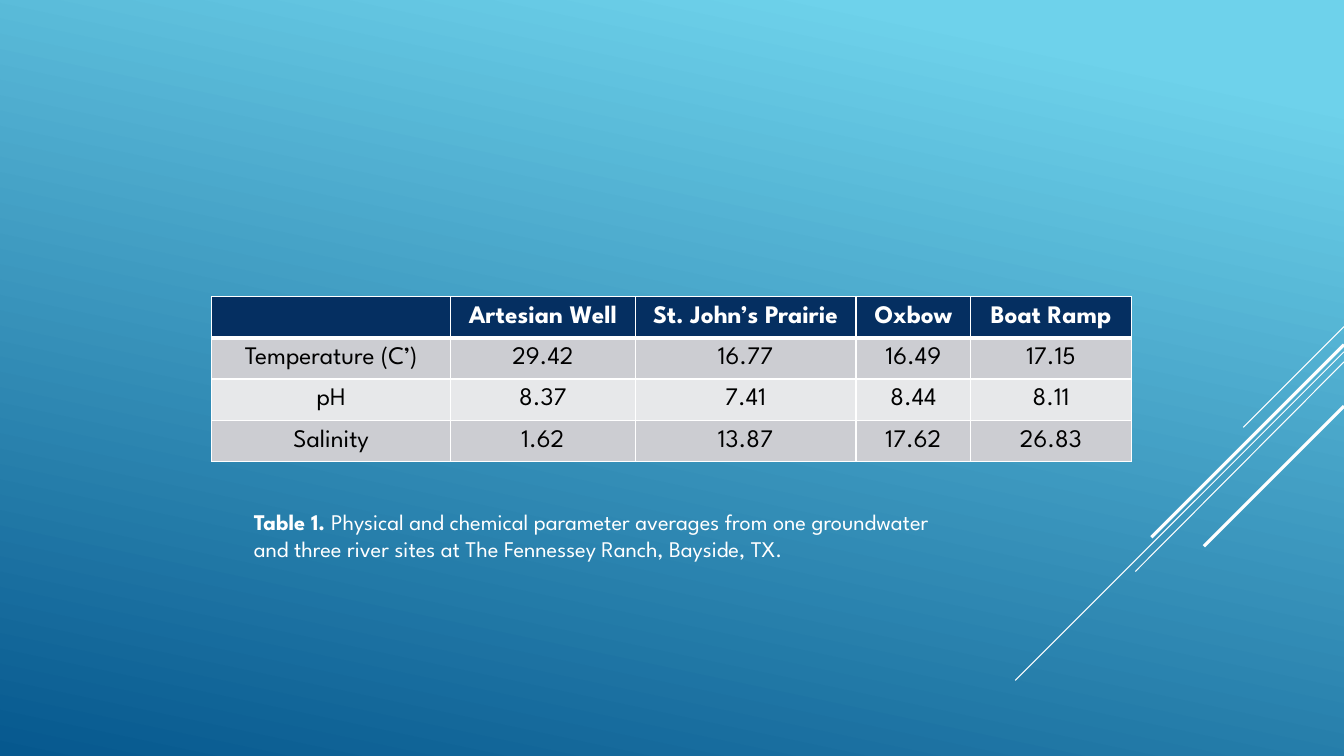
from lxml import etree
from pptx import Presentation
from pptx import util as u
from pptx.dml import color
from pptx.enum import shapes, text
from pptx.oxml import ns

COLORS = {
    "sky": "6ED2EB",
    "deep": "06588E",
    "navy": "052F61",
    "white": "FFFFFF",
    "black": "000000",
    "band": "CCCDD2",
    "pale": "E7E8EA",
}

STREAKS = [
    (3.24, 12.33, 4.24, 0.75),
    (3.49, 10.07, 6.75, 0.75),
    (3.59, 11.26, 5.67, 0.75),
    (3.42, 11.42, 5.33, 2.25),
    (4.03, 11.94, 5.42, 2.25),
]

COLUMN_WIDTHS = [2.37, 1.83, 2.19, 1.14, 1.59]
ROW_HEIGHT = 0.41
ROWS = [
    ["", "Artesian Well", "St. John’s Prairie", "Oxbow", "Boat Ramp"],
    ["Temperature (C’)", "29.42", "16.77", "16.49", "17.15"],
    ["pH", "8.37", "7.41", "8.44", "8.11"],
    ["Salinity", "1.62", "13.87", "17.62", "26.83"],
]

CAPTION = [
    [("Table 1. ", True),
     ("Physical and chemical parameter averages from one groundwater", False)],
    [("and three river sites at The Fennessey Ranch, Bayside, TX.", False)],
]


def rgb(name):
    return color.RGBColor.from_string(COLORS[name])


def apply(target, values):
    for name, value in values.items():
        setattr(target, name, value)


class SlideBuilder:
    font = "League Spartan"

    def __init__(self, deck):
        self.page = deck.slides.add_slide(deck.slide_layouts[6])

    def background(self, first, last, angle):
        fill = self.page.background.fill
        fill.gradient()
        fill.gradient_angle = angle
        for stop, (name, position) in zip(fill.gradient_stops, (first, last)):
            stop.color.rgb = rgb(name)
            stop.position = position

    def line(self, start, end, width):
        points = [u.Inches(value) for value in (*start, *end)]
        line = self.page.shapes.add_connector(shapes.MSO_CONNECTOR.STRAIGHT, *points)
        line.line.color.rgb = rgb("white")
        line.line.width = u.Pt(width)
        etree.SubElement(line._element.spPr, ns.qn("a:effectLst"))

    def span(self, para, words, size, name, bold):
        span = para.add_run()
        span.text = words
        apply(span.font, {"name": self.font, "size": u.Pt(size), "bold": bold})
        span.font.color.rgb = rgb(name)

    def caption(self, place, lines):
        box = self.page.shapes.add_textbox(*[u.Inches(value) for value in place])
        frame = box.text_frame
        apply(frame, {"word_wrap": True, "vertical_anchor": text.MSO_ANCHOR.TOP})
        for index, spans in enumerate(lines):
            para = frame.add_paragraph() if index else frame.paragraphs[0]
            for words, bold in spans:
                self.span(para, words, 16, "white", bold)

    def border(self, cell, side, width):
        properties = cell._tc.get_or_add_tcPr()
        edge = etree.SubElement(properties, ns.qn(f"a:ln{side}"), w=str(u.Pt(width)))
        fill = etree.SubElement(edge, ns.qn("a:solidFill"))
        etree.SubElement(fill, ns.qn("a:srgbClr"), val=COLORS["white"])

    def cell(self, cell, words, row):
        header = row == 0
        widths = {"L": 1, "R": 1, "T": 3 if row == 1 else 1, "B": 3 if header else 1}
        for side, width in widths.items():
            self.border(cell, side, width)
        cell.fill.solid()
        cell.fill.fore_color.rgb = rgb("navy" if header else "band" if row % 2 else "pale")
        cell.vertical_anchor = text.MSO_ANCHOR.MIDDLE
        para = cell.text_frame.paragraphs[0]
        para.alignment = text.PP_ALIGN.CENTER
        if words:
            self.span(para, words, 18, "white" if header else "black", header)

    def table(self, left, top, widths, row_height, rows):
        place = (left, top, sum(widths), row_height * len(rows))
        table = self.page.shapes.add_table(
            len(rows), len(widths), *[u.Inches(value) for value in place]).table
        for column, width in zip(table.columns, widths):
            column.width = u.Inches(width)
        for index, values in enumerate(rows):
            table.rows[index].height = u.Inches(row_height)
            for column, words in enumerate(values):
                self.cell(table.cell(index, column), words, index)


def main():
    deck = Presentation()
    apply(deck, {"slide_width": u.Inches(13.33), "slide_height": u.Inches(7.5)})
    builder = SlideBuilder(deck)
    builder.background(("sky", 0.1), ("deep", 1.0), 258)
    for top, left, bottom, width in STREAKS:
        builder.line((13.33, top), (left, bottom), width)
    builder.caption((2.42, 4.99, 8.48, 0.91), CAPTION)
    builder.table(2.1, 2.94, COLUMN_WIDTHS, ROW_HEIGHT, ROWS)
    deck.save("out.pptx")


if __name__ == "__main__":
    main()
